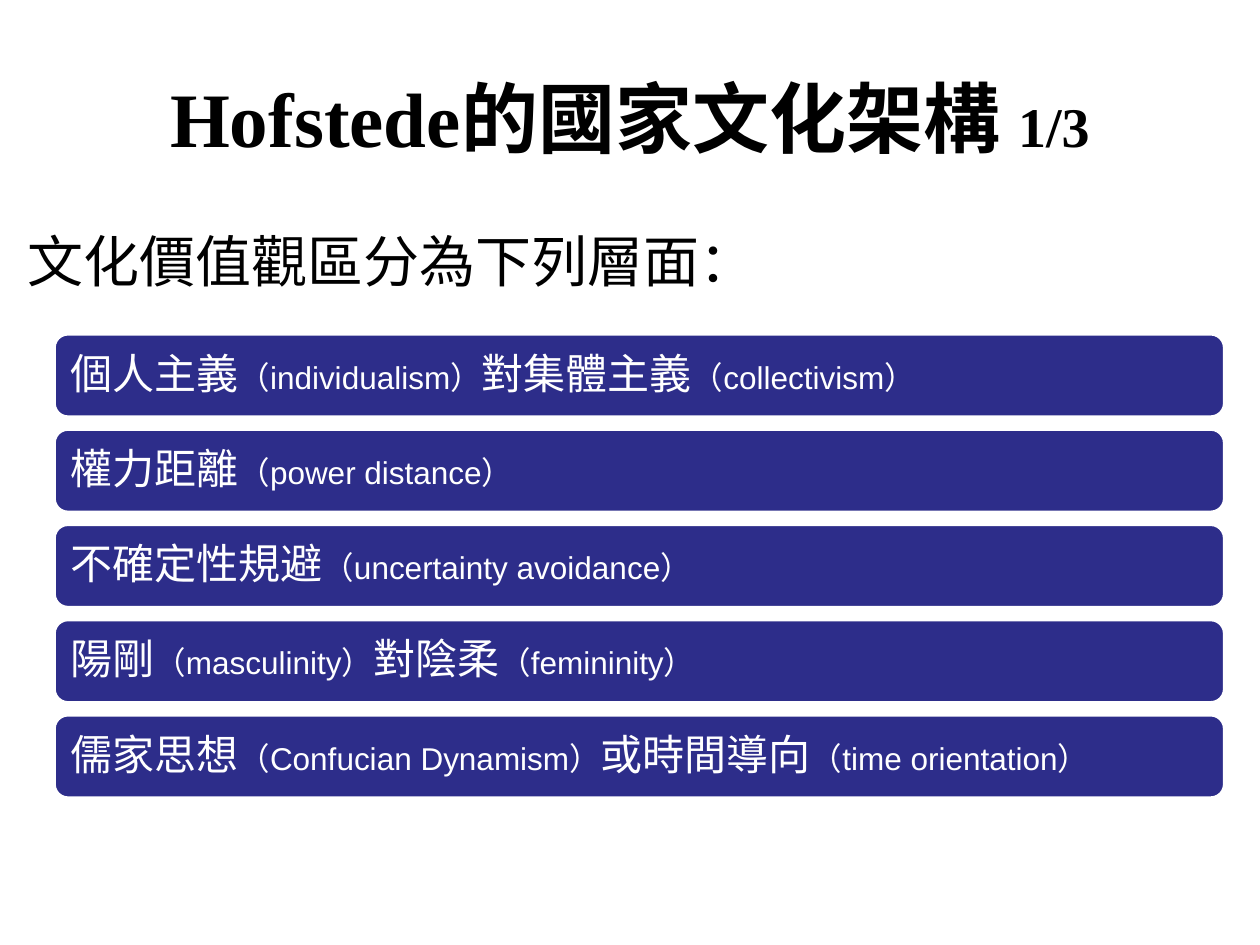
from pptx import Presentation
from pptx.dml.color import RGBColor
from pptx.enum.shapes import MSO_SHAPE as Shape
from pptx.enum.text import MSO_ANCHOR as Anchor, PP_ALIGN as Align
from pptx.util import Cm, Pt

COLORS = {"text": "000000", "bar": "2D2D8A", "white": "FFFFFF"}
HEADING_FONT, BAR_FONT = "Times New Roman", "Arial"
TERM_SIZE, ENGLISH_SIZE = 24, 18

# Each dimension alternates Chinese terms with their English names
DIMENSIONS = [
    ["個人主義", "（individualism）", "對集體主義", "（collectivism）"],
    ["權力距離", "（power distance）"],
    ["不確定性規避", "（uncertainty avoidance）"],
    ["陽剛", "（masculinity）", "對陰柔", "（femininity）"],
    ["儒家思想", "（Confucian Dynamism）", "或時間導向", "（time orientation）"],
]
BAR_LEFT, BAR_TOP, BAR_WIDTH, BAR_HEIGHT = 1.09, 6.73, 23.6, 1.68
BAR_PITCH = 1.92


def color(name):
    return RGBColor.from_string(COLORS[name])


def add_run(paragraph, text, size, font, color_name, bold=False):
    run = paragraph.add_run()
    run.text = text
    run.font.size = Pt(size)
    run.font.name = font
    run.font.bold = bold
    run.font.color.rgb = color(color_name)


def set_title(slide):
    title = slide.shapes.title
    title.left, title.top = Cm(1.27), Cm(0.76)
    title.width, title.height = Cm(22.86), Cm(3.18)
    title.text_frame.vertical_anchor = Anchor.MIDDLE
    paragraph = title.text_frame.paragraphs[0]
    paragraph.alignment = Align.CENTER
    for text, size in (("Hofstede的國家文化架構 ", 44), ("1/3", 32)):
        add_run(paragraph, text, size, HEADING_FONT, "text", bold=True)


def add_intro(slide, text):
    box = slide.shapes.add_textbox(Cm(0.3), Cm(4.45), Cm(24.8), Cm(12.57))
    box.text_frame.word_wrap = True
    add_run(box.text_frame.paragraphs[0], text, 32, HEADING_FONT, "text")


def add_bar(slide, top, parts):
    bar = slide.shapes.add_shape(
        Shape.ROUNDED_RECTANGLE, Cm(BAR_LEFT), Cm(top), Cm(BAR_WIDTH), Cm(BAR_HEIGHT))
    bar.shadow.inherit = False
    bar.fill.solid()
    bar.fill.fore_color.rgb = color("bar")
    bar.line.color.rgb = color("white")
    bar.line.width = Pt(2)

    frame = bar.text_frame
    frame.word_wrap = True
    frame.vertical_anchor = Anchor.MIDDLE
    # The rounded corners add a little to the inset
    frame.margin_left = frame.margin_right = Cm(0.25)
    frame.margin_top = frame.margin_bottom = Cm(0.25)
    paragraph = frame.paragraphs[0]
    paragraph.alignment = Align.LEFT
    paragraph.line_spacing = 0.9
    for index, text in enumerate(parts):
        size = ENGLISH_SIZE if index % 2 else TERM_SIZE
        add_run(paragraph, text, size, BAR_FONT, "white")


def main():
    presentation = Presentation()
    presentation.slide_width, presentation.slide_height = Cm(25.4), Cm(19.05)
    slide = presentation.slides.add_slide(presentation.slide_layouts[5])

    # Heading and lead-in
    set_title(slide)
    add_intro(slide, "文化價值觀區分為下列層面：")

    # Stack of dimension bars
    for row, parts in enumerate(DIMENSIONS):
        add_bar(slide, BAR_TOP + row * BAR_PITCH, parts)

    presentation.save("out.pptx")


if __name__ == "__main__":
    main()
